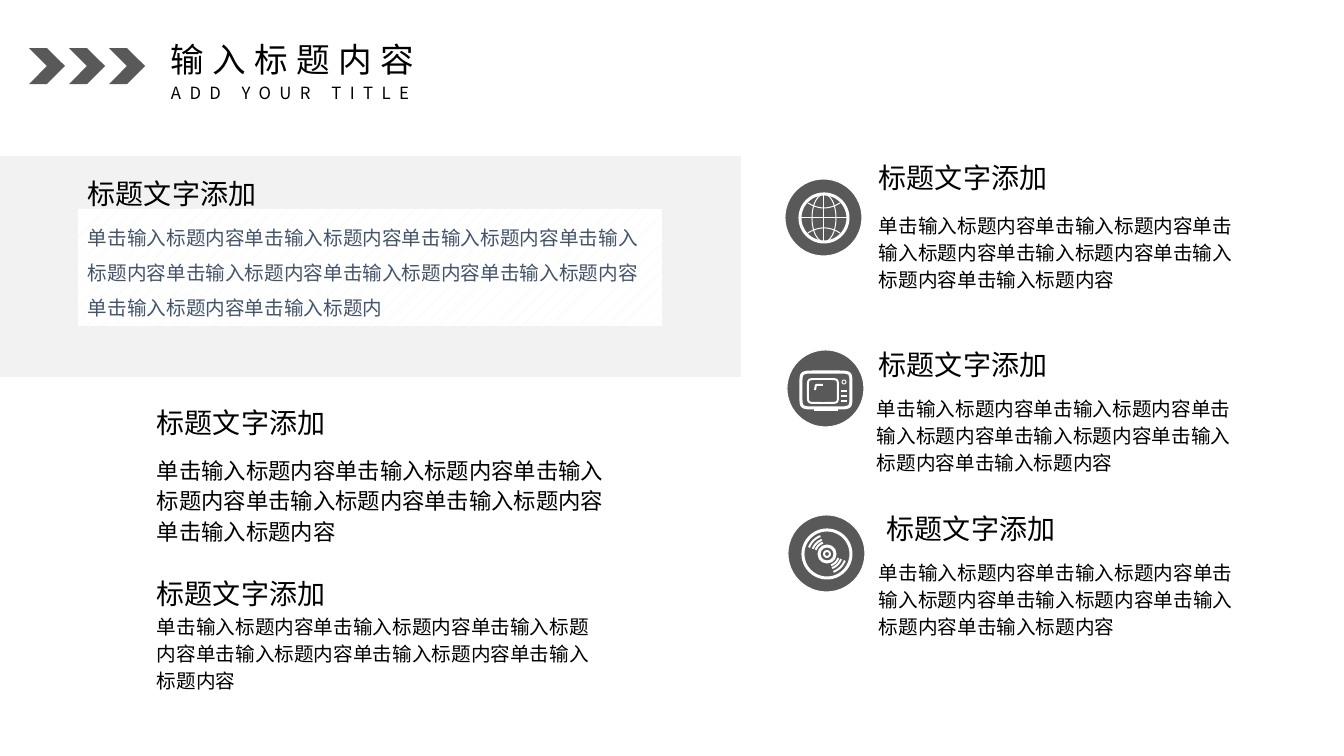
import math
from pptx import Presentation
from pptx import util as u
from pptx.dml import color
from pptx.enum import dml, shapes, text
from pptx.oxml import ns
from lxml import etree

PX = 914400 / 100.8
JP, SC = "Noto Sans CJK JP", "Noto Sans CJK SC"
BLACK, WHITE, GRAY, PALE, SLATE = "000000", "FFFFFF", "595959", "F2F2F2", "44546A"
PHRASE = "单击输入标题内容"
HEADING = "标题文字添加"


def px(value):
    return u.Emu(round(value * PX))


def rgb(value):
    return color.RGBColor.from_string(value)


def apply(target, values):
    for name, value in values.items():
        setattr(target, name, value)


def add_text(frame, runs, size, ink=BLACK, line_spacing=None, spacing=0):
    apply(frame, {"word_wrap": True, "vertical_anchor": text.MSO_ANCHOR.TOP})
    paragraph = frame.paragraphs[0]
    apply(paragraph, {"alignment": text.PP_ALIGN.LEFT, "line_spacing": line_spacing})
    for words, face in runs:
        run = paragraph.add_run()
        run.text = words
        apply(run.font, {"size": u.Pt(size), "name": face})
        run.font.color.rgb = rgb(ink)
        properties = run.font._element
        if spacing:
            properties.set("spc", str(spacing * 100))
        etree.SubElement(properties, ns.qn("a:ea")).set("typeface", face)


def text_box(slide, box, runs, size, **style):
    shape = slide.shapes.add_textbox(*map(px, box))
    add_text(shape.text_frame, runs, size, **style)


def solid(slide, kind, box, fill):
    shape = slide.shapes.add_shape(kind, *map(px, box))
    shape.shadow.inherit = False
    shape.fill.solid()
    shape.fill.fore_color.rgb = rgb(fill)
    shape.line.fill.background()
    return shape


def stroke(shape, width):
    shape.line.color.rgb = rgb(WHITE)
    shape.line.width = px(width)


def hollow(shape, width):
    shape.shadow.inherit = False
    shape.fill.background()
    stroke(shape, width)


def ring(slide, x, y, across, down, width):
    box = (x - across, y - down, 2 * across, 2 * down)
    hollow(slide.shapes.add_shape(shapes.MSO_SHAPE.OVAL, *map(px, box)), width)


def line(slide, x1, y1, x2, y2, width):
    connector = slide.shapes.add_connector(
        shapes.MSO_CONNECTOR.STRAIGHT, px(x1), px(y1), px(x2), px(y2))
    stroke(connector, width)
    etree.SubElement(connector._element.spPr, ns.qn("a:effectLst"))


def curve(slide, points, width, close=False):
    points = [(px(x), px(y)) for x, y in points]
    builder = slide.shapes.build_freeform(*points[0])
    builder.add_line_segments(points[1:], close=close)
    hollow(builder.convert_to_shape(), width)


def rounded_frame(slide, x, y, across, down, width):
    def bend(value):
        return math.copysign(abs(value) ** 0.25, value)

    angles = [math.radians(step * 5) for step in range(72)]
    points = [(x + across * bend(math.cos(a)), y + down * bend(math.sin(a))) for a in angles]
    curve(slide, points, width, close=True)


def globe(slide, x, y):
    ring(slide, x, y, 24, 24, 3)
    ring(slide, x, y, 12, 24, 1)
    line(slide, x - 24, y, x + 24, y, 1)
    line(slide, x, y - 24, x, y + 24, 1)
    for side in (-1, 1):
        points = [(x + dx, y + side * (10 + 5 * (dx / 16) ** 2)) for dx in range(-16, 17, 2)]
        curve(slide, points, 1)


def television(slide, x, y):
    rounded_frame(slide, x, y + 1, 25, 18, 3)
    rounded_frame(slide, x - 3, y + 2, 15, 12, 2)
    ring(slide, x + 18, y - 7, 2, 2, 1)
    for top in (2, 7, 12):
        line(slide, x + 15, y + top, x + 21, y + top, 2)
    curve(slide, [(x - 11, y + 1), (x - 10, y - 4), (x - 3, y - 4)], 2)
    line(slide, x - 12, y + 21, x + 12, y + 21, 2)


def record(slide, x, y):
    for radius, width in ((24, 3), (8, 3), (3, 2)):
        ring(slide, x, y, radius, radius, width)
    for radius in (12, 15, 19):
        for start in (20, 200):
            angles = [math.radians(start + step) for step in range(0, 51, 5)]
            points = [(x + radius * math.cos(a), y + radius * math.sin(a)) for a in angles]
            curve(slide, points, 2)


def header(slide, box):
    left, top, width, height = box
    for index in range(3):
        solid(slide, shapes.MSO_SHAPE.CHEVRON, (left + 40 * index, top + 14, 36, 36), GRAY)
    text_box(slide, (left + 132, top, width - 132, 50), [("输入标题内容", JP)], 24, spacing=6)
    text_box(slide, (left + 132, top + 44, width - 132, 30),
             [("ADD YOUR ", SC), ("TITLE", JP)], 12, spacing=6)


def heading(slide, left, top):
    text_box(slide, (left, top, 238, 44), [(HEADING, JP)], 20)


def highlight(slide, box):
    left, top, width, height = box
    solid(slide, shapes.MSO_SHAPE.RECTANGLE, box, PALE)
    panel = solid(slide, shapes.MSO_SHAPE.RECTANGLE, (left + 78, top + 53, 584, 117), WHITE)
    panel.fill.patterned()
    panel.fill.pattern = dml.MSO_PATTERN.PERCENT_5
    panel.fill.fore_color.rgb = rgb(PALE)
    panel.fill.back_color.rgb = rgb(WHITE)
    add_text(panel.text_frame, [((PHRASE * 9)[:-1], JP)], 14, ink=SLATE, line_spacing=1.5)
    heading(slide, left + 78, top + 16)


def entry(slide, box, drop, size=14, indent=0):
    left, top, width, height = box
    heading(slide, left + indent, top)
    text_box(slide, (left, top + drop, width, height - drop),
             [(PHRASE * 6, JP)], size, line_spacing=1.14)


def icon_entry(slide, box, drop, indent, badge, icon):
    left, top, width, height = box
    x, y = left + badge[0], top + badge[1]
    disc = solid(slide, shapes.MSO_SHAPE.OVAL, (x, y, 77, 77), GRAY)
    stroke(disc, 1)
    icon(slide, x + 39, y + 39)
    entry(slide, box, drop, indent=indent)


def main():
    presentation = Presentation()
    apply(presentation, {"slide_width": px(1344), "slide_height": px(756)})
    slide = presentation.slides.add_slide(presentation.slide_layouts[6])
    header(slide, (29, 34, 500, 74))
    highlight(slide, (0, 156, 741, 221))
    entry(slide, (147, 401, 469, 150), 47, size=16)
    entry(slide, (147, 572, 470, 140), 35)
    icon_entry(slide, (869, 156, 392, 142), 50, 0, (-84, 23), globe)
    icon_entry(slide, (867, 343, 393, 138), 46, 2, (-80, 7), television)
    icon_entry(slide, (869, 507, 393, 138), 46, 8, (-81, 8), record)
    presentation.save("out.pptx")


if __name__ == "__main__":
    main()
